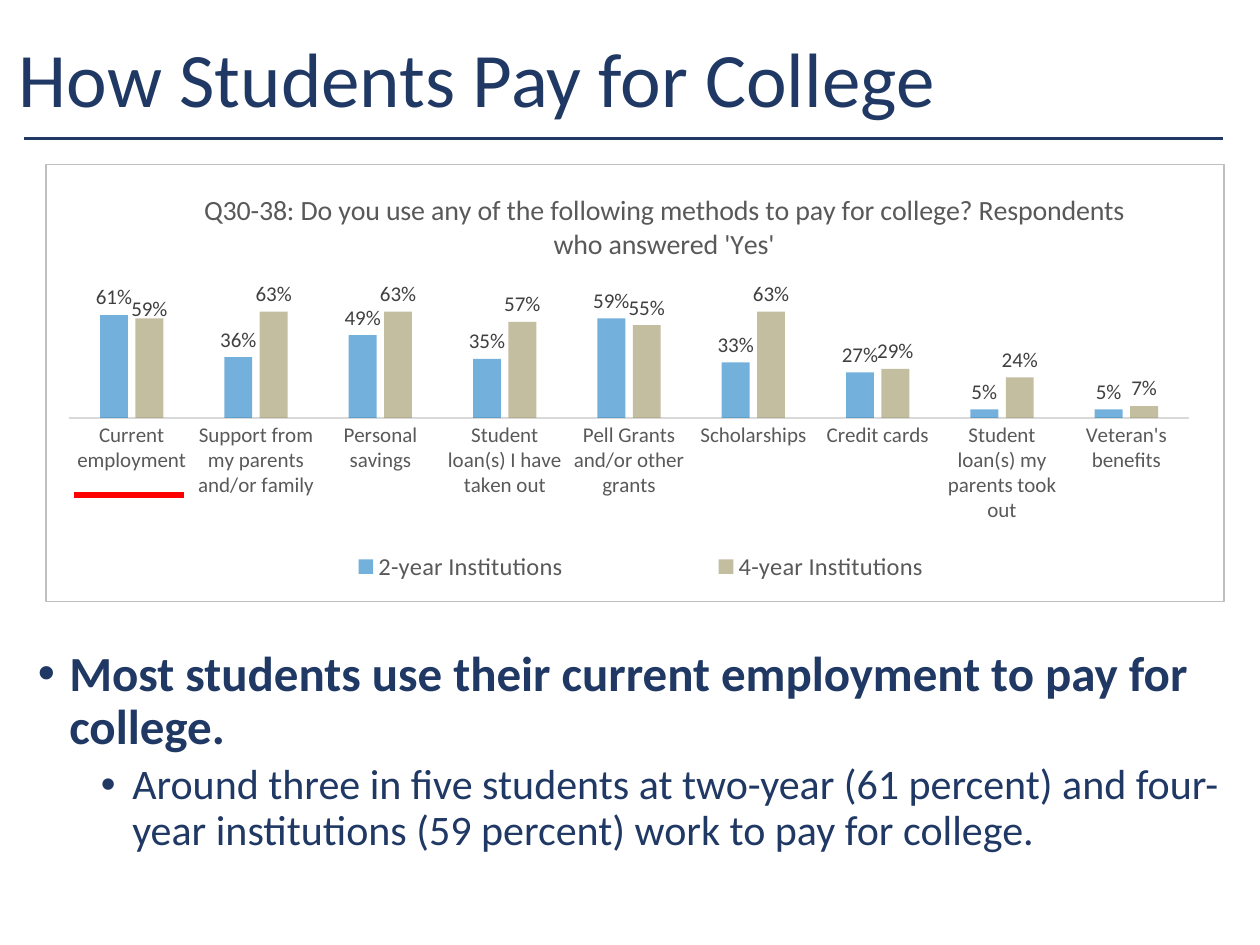
from lxml import etree
from pptx import Presentation, util as u
from pptx.chart.data import CategoryChartData
from pptx.dml.color import RGBColor
from pptx.enum import chart as ch, shapes, text
from pptx.oxml import parse_xml
from pptx.oxml.ns import nsdecls, qn

WIDTH, HEIGHT = 10, 7.5
FONT = "Calibri"
PERCENT = '0"%"'
COLORS = {
    "navy": "203864", "grey": "595959", "label": "404040", "axis": "D9D9D9",
    "border": "BFBFBF", "two_year": "0070C0", "four_year": "948A54",
    "highlight": "FF0000",
}
PAYMENT_METHODS = [
    ("Current employment", 61, 59),
    ("Support from my parents and/or family", 36, 63),
    ("Personal savings", 49, 63),
    ("Student loan(s) I have taken out", 35, 57),
    ("Pell Grants and/or other grants", 59, 55),
    ("Scholarships", 33, 63),
    ("Credit cards", 27, 29),
    ("Student loan(s) my parents took out", 5, 24),
    ("Veteran's benefits", 5, 7),
]
QUESTION = ("Q30-38: Do you use any of the following methods to pay for college? "
            "Respondents who answered 'Yes'")
FINDINGS = [
    dict(words="Most students use their current employment to pay for college.",
         level=0, indent=0.25, before=0, size=28, bold=True),
    dict(words="Around three in five students at two-year (61 percent) and four-year "
               "institutions (59 percent) work to pay for college.",
         level=1, indent=0.75, before=5, size=24, bold=False),
]


def rgb(name):
    return RGBColor.from_string(COLORS[name])


def style_font(font, size, color, bold=False):
    values = {"name": FONT, "size": u.Pt(size), "bold": bold}
    for key, value in values.items():
        setattr(font, key, value)
    font.color.rgb = rgb(color)


def place(shape, left, top, width, height):
    box = {"left": left, "top": top, "width": width, "height": height}
    for side, inches in box.items():
        setattr(shape, side, u.Inches(inches))


def add_rule(slide, left, right, y, color, weight):
    rule = slide.shapes.add_connector(
        shapes.MSO_CONNECTOR.STRAIGHT, *map(u.Inches, (left, y, right, y)))
    rule.line.color.rgb = rgb(color)
    rule.line.width = u.Pt(weight)
    etree.SubElement(rule._element.spPr, qn("a:effectLst"))


def fill_title(title):
    place(title, 0.05, 0.22, 8.62, 0.87)
    frame = title.text_frame
    frame.text = "How Students Pay for College"
    frame.auto_size = text.MSO_AUTO_SIZE.NONE
    frame.vertical_anchor = text.MSO_ANCHOR.MIDDLE
    heading = frame.paragraphs[0]
    heading.alignment = text.PP_ALIGN.LEFT
    heading.line_spacing = 0.9
    style_font(heading.runs[0].font, 44, "navy")


def fill_findings(body):
    place(body, 0.2, 5.1, 9.69, 1.72)
    frame = body.text_frame
    frame.auto_size = text.MSO_AUTO_SIZE.NONE
    for number, finding in enumerate(FINDINGS):
        point = frame.add_paragraph() if number else frame.paragraphs[0]
        point.level = finding["level"]
        point.line_spacing = 0.9
        point.space_before = u.Pt(finding["before"])
        props = point._p.get_or_add_pPr()
        props.set("marL", str(u.Inches(finding["indent"])))
        props.set("indent", str(u.Inches(-0.25)))
        etree.SubElement(props, qn("a:buFont"), typeface="Arial")
        etree.SubElement(props, qn("a:buChar"), char="•")
        run = point.add_run()
        run.text = finding["words"]
        style_font(run.font, finding["size"], "navy", finding["bold"])


def manual_layout(target=None, mode="edge", **shares):
    """Layout element whose x, y, w and h are shares of the chart's size."""
    inner = f'<c:layoutTarget val="{target}"/>' if target else ""
    if mode == "edge":
        inner += '<c:xMode val="edge"/><c:yMode val="edge"/>'
    inner += "".join(f'<c:{key} val="{share}"/>' for key, share in shares.items())
    return parse_xml(f'<c:layout {nsdecls("c")}><c:manualLayout>{inner}'
                     '</c:manualLayout></c:layout>')


def set_layout(parent, layout, after=None):
    for old in parent.findall(qn("c:layout")):
        parent.remove(old)
    previous = parent.find(qn(after)) if after else None
    if previous is None:
        parent.insert(0, layout)
    else:
        previous.addnext(layout)


def style_series(series, color):
    fill = series.format.fill
    fill.solid()
    fill.fore_color.rgb = rgb(color)
    tint = series._element.spPr.find(".//" + qn("a:srgbClr"))
    etree.SubElement(tint, qn("a:alpha"), val="55000")
    series.invert_if_negative = False
    labels = series.data_labels
    values = {"show_value": True, "number_format": PERCENT,
              "number_format_is_linked": False,
              "position": ch.XL_LABEL_POSITION.OUTSIDE_END}
    for key, value in values.items():
        setattr(labels, key, value)
    style_font(labels.font, 12, "label")


def lower_label(point, share):
    label = point.data_label
    style_font(label.font, 12, "label")
    label.position = ch.XL_LABEL_POSITION.OUTSIDE_END
    set_layout(label._get_or_add_dLbl(),
               manual_layout(mode="factor", x=0, y=share), after="c:idx")


def style_axes(chart):
    methods, share = chart.category_axis, chart.value_axis
    for axis, size in ((methods, 12), (share, 9)):
        axis.major_tick_mark = axis.minor_tick_mark = ch.XL_TICK_MARK.NONE
        axis.has_major_gridlines = False
        style_font(axis.tick_labels.font, size, "grey")
    methods.format.line.color.rgb = rgb("axis")
    methods.format.line.width = u.Pt(0.75)
    share.format.line.fill.background()
    share.tick_label_position = ch.XL_TICK_LABEL_POSITION.NONE
    share.minimum_scale, share.maximum_scale = 0, 70


def add_border(chart):
    chart._chartSpace.find(qn("c:chart")).addnext(parse_xml(
        f'<c:spPr {nsdecls("c", "a")}><a:noFill/><a:ln w="{u.Pt(0.75)}"><a:solidFill>'
        f'<a:srgbClr val="{COLORS["border"]}"/></a:solidFill></a:ln></c:spPr>'))


def add_payment_chart(slide):
    methods, two_year, four_year = zip(*PAYMENT_METHODS)
    data = CategoryChartData(number_format=PERCENT)
    data.categories = methods
    data.add_series("2-year Institutions", two_year)
    data.add_series("4-year Institutions", four_year)
    chart = slide.shapes.add_chart(
        ch.XL_CHART_TYPE.COLUMN_CLUSTERED,
        *map(u.Inches, (0.36, 1.3, 9.36, 3.48)), data).chart
    chart.font.name, chart.font.size = FONT, u.Pt(10)

    chart.has_title = True
    chart.chart_title.text_frame.text = QUESTION
    style_font(chart.chart_title.text_frame.paragraphs[0].runs[0].font, 16, "grey")
    set_layout(chart.chart_title._element, manual_layout(x=0.13, y=0.05), after="c:tx")

    chart.has_legend = True
    chart.legend.position = ch.XL_LEGEND_POSITION.BOTTOM
    chart.legend.include_in_layout = False
    style_font(chart.legend.font, 14, "grey")
    set_layout(chart.legend._element,
               manual_layout(x=0.14, y=0.87, w=0.73, h=0.1), after="c:legendPos")

    bars = chart.plots[0]
    bars.gap_width, bars.overlap, bars.vary_by_categories = 219, -27, False
    for series, color in zip(bars.series, ("two_year", "four_year")):
        style_series(series, color)
    lower_label(bars.series[1].points[0], 0.02)
    style_axes(chart)
    set_layout(chart._chartSpace.find(".//" + qn("c:plotArea")),
               manual_layout("inner", x=0.02, y=0.31, w=0.95, h=0.27))
    add_border(chart)


def main():
    deck = Presentation()
    deck.slide_width, deck.slide_height = u.Inches(WIDTH), u.Inches(HEIGHT)
    slide = deck.slides.add_slide(deck.slide_layouts[1])
    add_rule(slide, 0.19, 9.71, 1.1, "navy", 1.75)
    fill_title(slide.shapes.title)
    fill_findings(slide.placeholders[1])
    add_payment_chart(slide)
    add_rule(slide, 0.59, 1.46, 3.93, "highlight", 3.5)
    deck.save("out.pptx")


if __name__ == "__main__":
    main()
